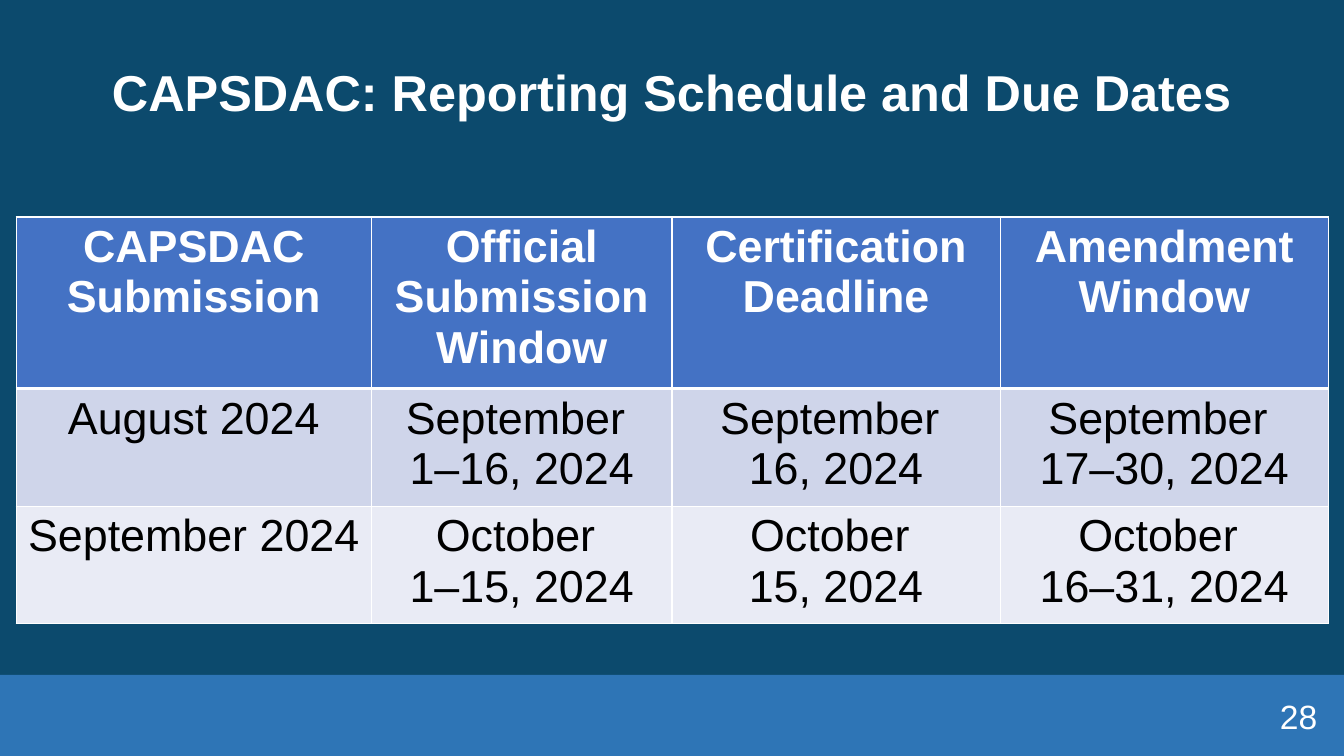
import pptx
import pptx.util
import pptx.dml.color
import pptx.enum.shapes
import pptx.enum.text
import pptx.oxml
import pptx.oxml.ns

Pt = pptx.util.Pt
ALIGN = pptx.enum.text.PP_ALIGN
MIDDLE = pptx.enum.text.MSO_ANCHOR.MIDDLE

COLUMN_WIDTHS = [254, 214.5, 234.5, 234.5]
ROW_HEIGHTS = [115, 79, 79]
ROW_FILLS = ["4472C4", "CFD5EA", "E9EBF5"]
SCHEDULE = [
    ["CAPSDAC Submission", "Official Submission Window",
     "Certification Deadline", "Amendment Window"],
    ["August 2024", "September \n1–16, 2024",
     "September \n16, 2024", "September \n17–30, 2024"],
    ["September 2024", "October \n1–15, 2024",
     "October \n15, 2024", "October \n16–31, 2024"],
]


def rgb(value):
    return pptx.dml.color.RGBColor.from_string(value)


def format_text(tf, size, color, bold, align):
    for p in tf.paragraphs:
        p.alignment = align
        for r in p.runs:
            r.font.name = "Arial"
            r.font.size = Pt(size)
            r.font.bold = bold
            r.font.color.rgb = rgb(color)


def place(shape, x, y, w, h):
    shape.left, shape.top = Pt(x), Pt(y)
    shape.width, shape.height = Pt(w), Pt(h)


def set_borders(cell, widths):
    tcPr = cell._tc.get_or_add_tcPr()
    for i, (side, width) in enumerate(widths.items()):
        line = pptx.oxml.parse_xml(
            f'<a:ln{side} {pptx.oxml.ns.nsdecls("a")} w="{Pt(width)}">'
            '<a:solidFill><a:srgbClr val="FFFFFF"/></a:solidFill>'
            f'</a:ln{side}>')
        tcPr.insert(i, line)


def add_title(s, x, y, w, h):
    title = s.shapes.title
    place(title, x, y, w, h)
    tf = title.text_frame
    tf.text = "CAPSDAC: Reporting Schedule and Due Dates"
    tf.word_wrap = True
    tf.vertical_anchor = MIDDLE
    tf.paragraphs[0].line_spacing = 0.9
    format_text(tf, 36, "FFFFFF", True, ALIGN.CENTER)


def add_schedule(s, x, y, w, h):
    frame = s.shapes.add_table(len(SCHEDULE), len(COLUMN_WIDTHS),
                               Pt(x), Pt(y), Pt(w), Pt(h))
    table = frame.table
    for column, width in zip(table.columns, COLUMN_WIDTHS):
        column.width = Pt(width)
    for row, height in zip(table.rows, ROW_HEIGHTS):
        row.height = Pt(height)
    for i, texts in enumerate(SCHEDULE):
        header = i == 0
        for j, text in enumerate(texts):
            cell = table.cell(i, j)
            cell.text_frame.text = text
            format_text(cell.text_frame, 32, "FFFFFF" if header else "000000",
                        header, ALIGN.CENTER)
            cell.fill.solid()
            cell.fill.fore_color.rgb = rgb(ROW_FILLS[i])
            set_borders(cell, {"L": 1, "R": 1, "T": 3 if i == 1 else 1,
                               "B": 3 if header else 1})


def add_footer(s, x, y, w, h):
    bar = s.shapes.add_shape(pptx.enum.shapes.MSO_SHAPE.RECTANGLE,
                             Pt(x), Pt(y), Pt(w), Pt(h))
    bar.shadow.inherit = False
    bar.fill.solid()
    bar.fill.fore_color.rgb = rgb("2E75B6")
    bar.line.fill.background()
    number = s.shapes.add_textbox(Pt(x + w - 228), Pt(y + 15), Pt(216), Pt(29))
    tf = number.text_frame
    tf.word_wrap = True
    tf.vertical_anchor = MIDDLE
    tf.text = "28"
    format_text(tf, 24, "FFFFFF", False, ALIGN.RIGHT)


def main():
    prs = pptx.Presentation()
    prs.slide_width, prs.slide_height = Pt(960), Pt(540)
    s = prs.slides.add_slide(prs.slide_layouts[5])
    s.background.fill.solid()
    s.background.fill.fore_color.rgb = rgb("0C4A6D")
    add_footer(s, 0, 482, 960, 58)
    add_title(s, 12, 16, 936, 104)
    add_schedule(s, 11.5, 155, sum(COLUMN_WIDTHS), sum(ROW_HEIGHTS))
    prs.save("out.pptx")


if __name__ == "__main__":
    main()
